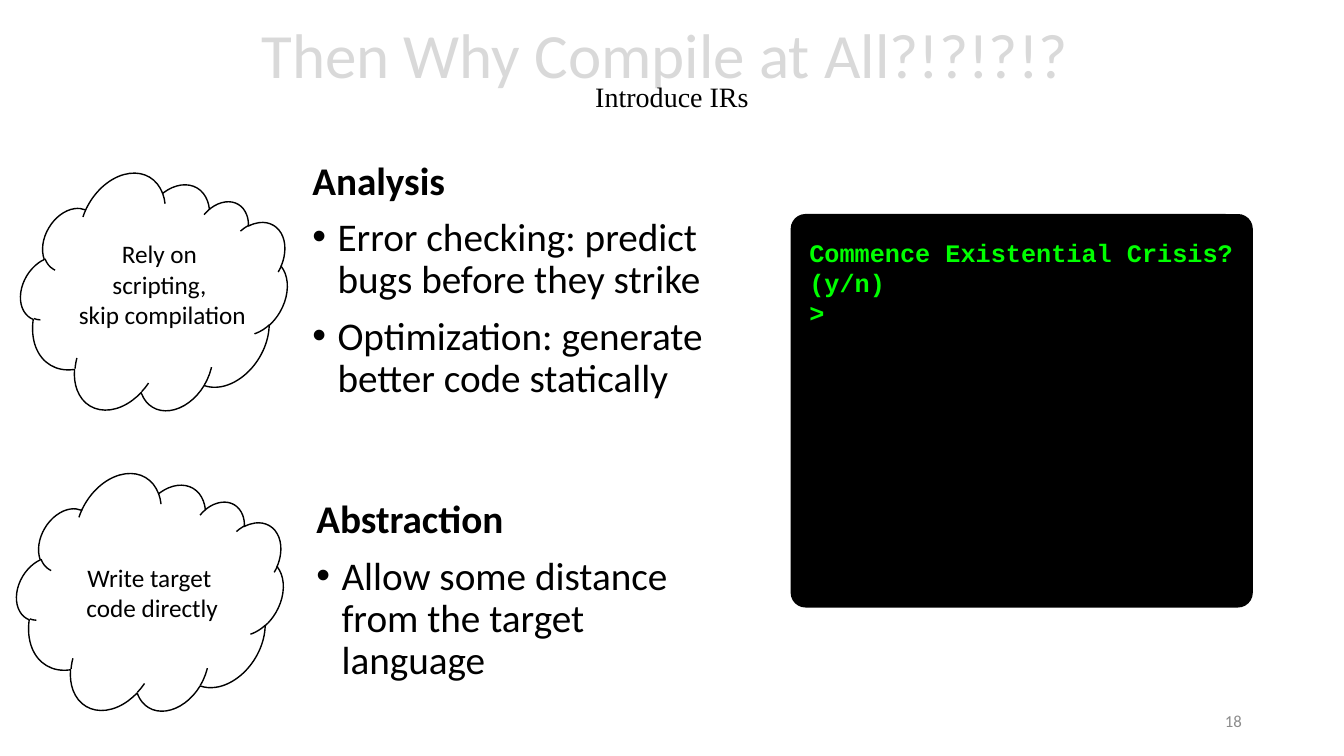
from dataclasses import dataclass

from lxml import etree
from pptx import Presentation
from pptx.dml.color import RGBColor
from pptx.enum.shapes import MSO_SHAPE
from pptx.enum.text import MSO_ANCHOR, MSO_AUTO_SIZE, PP_ALIGN
from pptx.oxml.ns import qn
from pptx.slide import Slide
from pptx.util import Inches, Pt

CLOUD, RECTANGLE, ROUNDED = MSO_SHAPE.CLOUD, MSO_SHAPE.RECTANGLE, MSO_SHAPE.ROUNDED_RECTANGLE
LEFT, CENTER, RIGHT = PP_ALIGN.LEFT, PP_ALIGN.CENTER, PP_ALIGN.RIGHT
TOP, MIDDLE = MSO_ANCHOR.TOP, MSO_ANCHOR.MIDDLE
NO_AUTOFIT = MSO_AUTO_SIZE.NONE
WIDTH, HEIGHT = Inches(13.33), Inches(7.5)
BLACK, WHITE, GREEN = "000000", "FFFFFF", "00FF00"
PALE, GREY = "D9D9D9", "8C8C8C"


def color(value):
    return RGBColor.from_string(value)


@dataclass
class SlideBuilder:
    """Draws styled elements on one slide, with boxes in percent of its size."""

    slide: Slide
    font: str = "Calibri"

    def place(self, left, top, width, height):
        return (int(WIDTH * left / 100), int(HEIGHT * top / 100),
                int(WIDTH * width / 100), int(HEIGHT * height / 100))

    def style(self, font, size, ink, name=None, bold=False):
        font.name = name or self.font
        font.size = Pt(size)
        font.bold = bold
        font.color.rgb = color(ink)

    def title(self, box, heading, subtitle):
        shape = self.slide.shapes.title
        shape.left, shape.top, shape.width, shape.height = self.place(*box)
        frame = shape.text_frame
        frame.auto_size = NO_AUTOFIT
        frame.vertical_anchor = MIDDLE
        paragraph = frame.paragraphs[0]
        paragraph.alignment = CENTER
        paragraph.line_spacing = 0.7
        run = paragraph.add_run()
        run.text = heading
        self.style(run.font, 45, PALE)
        paragraph.add_line_break()
        run = paragraph.add_run()
        run.text = subtitle
        self.style(run.font, 20, BLACK, "Times New Roman")

    def shape(self, kind, box, fill, line, rotation=0):
        shape = self.slide.shapes.add_shape(kind, *self.place(*box))
        shape.shadow.inherit = False
        shape.fill.solid()
        shape.fill.fore_color.rgb = color(fill)
        shape.line.color.rgb = color(line)
        shape.line.width = Pt(1)
        shape.rotation = rotation
        return shape

    def frame(self, box, wrap=False, anchor=TOP):
        frame = self.slide.shapes.add_textbox(*self.place(*box)).text_frame
        frame.word_wrap = wrap
        frame.auto_size = NO_AUTOFIT
        frame.vertical_anchor = anchor
        return frame

    def text(self, box, lines, size=18, ink=BLACK, name=None, bold=False,
             alignment=CENTER, anchor=TOP):
        frame = self.frame(box, anchor=anchor)
        frame.text = "\n".join(lines)
        for paragraph in frame.paragraphs:
            paragraph.alignment = alignment
            self.style(paragraph.font, size, ink, name, bold)

    def bullets(self, box, heading, points):
        frame = self.frame(box, wrap=True)
        frame.text = "\n".join([heading, *points])
        for index, paragraph in enumerate(frame.paragraphs):
            paragraph.line_spacing = 0.9
            paragraph.space_before = Pt(10)
            self.style(paragraph.font, 28, BLACK, bold=index == 0)
            if index:
                properties = paragraph._p.get_or_add_pPr()
                properties.set("marL", str(Inches(0.25)))
                properties.set("indent", str(-Inches(0.25)))
                bullet_font = etree.Element(qn("a:buFont"), typeface="Arial")
                bullet = etree.Element(qn("a:buChar"), char="•")
                default = properties.find(qn("a:defRPr"))
                default.addprevious(bullet_font)
                default.addprevious(bullet)

    def cloud(self, left, top, text_box, lines):
        self.shape(CLOUD, (left, top, 18.38, 32.93), WHITE, BLACK, 30.7)
        self.shape(RECTANGLE, (left + 11.78, top + 19.3, 3.15, 6.4), WHITE, WHITE)
        self.text(text_box, lines)

    def terminal(self, box, text_box, lines):
        self.shape(ROUNDED, box, BLACK, BLACK).adjustments[0] = 0.036
        self.text(text_box, lines, ink=GREEN, name="Courier New", bold=True, alignment=LEFT)


def main():
    presentation = Presentation()
    presentation.slide_width, presentation.slide_height = WIDTH, HEIGHT
    builder = SlideBuilder(presentation.slides.add_slide(presentation.slide_layouts[5]))
    builder.title((0, 0.13, 100, 19.33), "Then Why Compile at All?!?!?!? ", "Introduce IRs")
    builder.bullets((22.8, 65.47, 30.83, 26.93), "Abstraction",
                    ["Allow some distance from the target language"])
    builder.text((70.65, 92.67, 22.5, 5.33), ["18"], 12, GREY, alignment=RIGHT, anchor=MIDDLE)
    builder.terminal((58.88, 28.4, 34.28, 51.87), (59.48, 30.67, 34.28, 13.47),
                     ["Commence Existential Crisis?", "(y/n)", ">"])
    builder.bullets((22.5, 20.67, 34.5, 36.53), "Analysis",
                    ["Error checking: predict bugs before they strike",
                     "Optimization: generate better code statically"])
    builder.cloud(2.1, 22.8, (5.03, 30.93, 14.1, 13.47),
                  ["Rely on ", "scripting, ", "skip compilation"])
    builder.cloud(1.8, 62.53, (5.63, 73.73, 11.4, 9.47),
                  ["Write target ", "code directly"])
    presentation.save("out.pptx")


if __name__ == "__main__":
    main()
